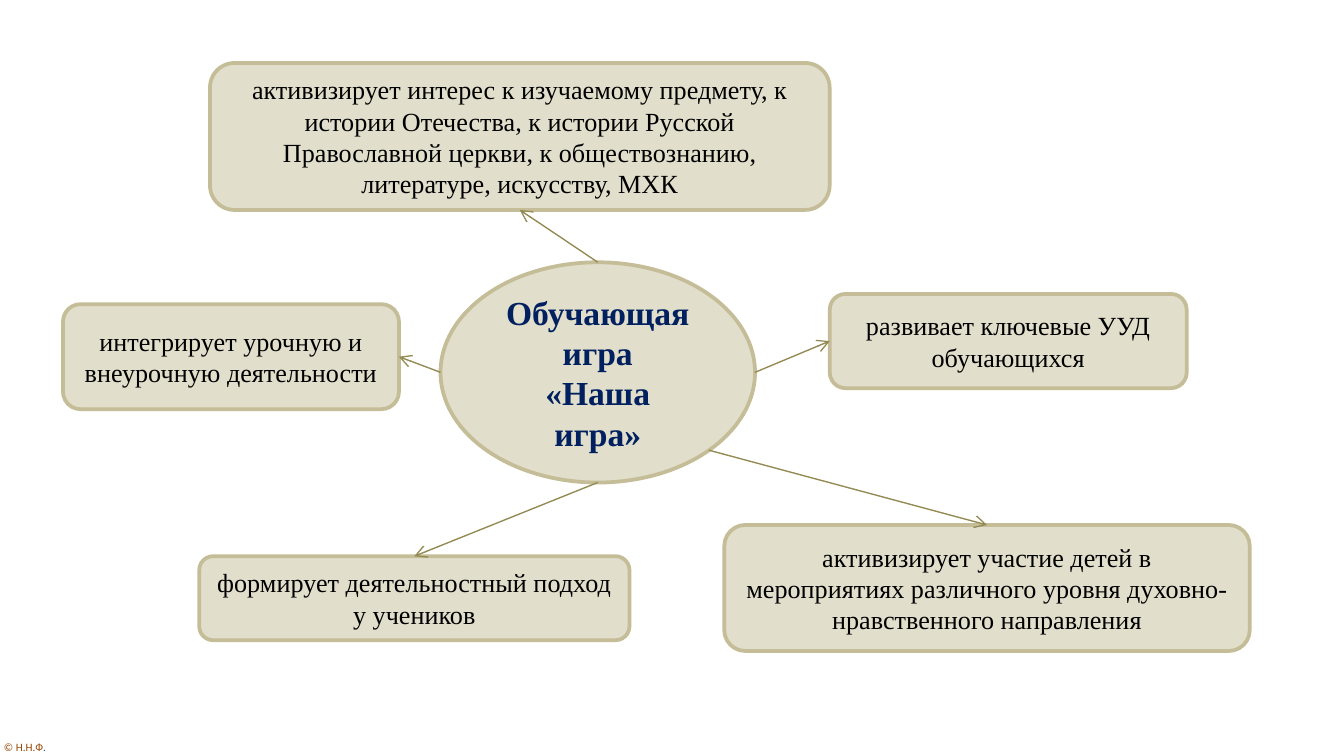
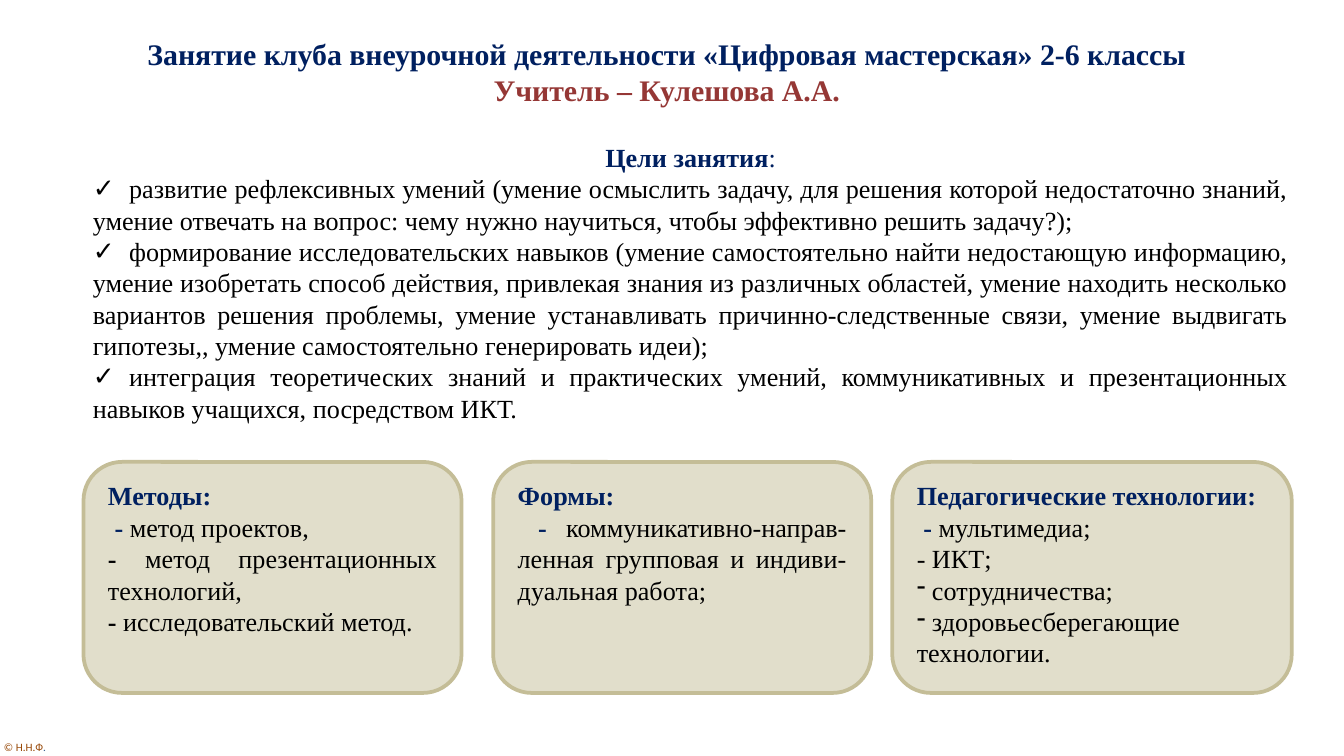
import math

import pptx
import pptx.dml.color
import pptx.enum.shapes
import pptx.enum.text
import pptx.oxml
import pptx.oxml.ns
import pptx.util
import lxml.etree

Pt = pptx.util.Pt
qn = pptx.oxml.ns.qn
RGB = pptx.dml.color.RGBColor.from_string
SHAPE = pptx.enum.shapes.MSO_SHAPE
ALIGN = pptx.enum.text.PP_ALIGN
ANCHOR = pptx.enum.text.MSO_ANCHOR

COLORS = {
    "navy": "002060", "red": "953735", "black": "000000",
    "sand": "DDD9C3", "border": "C4BD97", "arrow": "948A54",
    "brown": "984807", "blue": "376092",
}
SERIF = "Times New Roman"
BODY = {"name": SERIF, "size": Pt(14), "bold": False, "color": "black"}
HEAD = {**BODY, "bold": True, "color": "navy"}
DASH = {**BODY, "bold": True}
CENTER, JUSTIFY, LEFT = ALIGN.CENTER, ALIGN.JUSTIFY, ALIGN.LEFT


def write(tf, paras):
    """Fill a text frame; each paragraph is (alignment, layout, runs)."""
    for i, (align, layout, runs) in enumerate(paras):
        p = tf.paragraphs[0] if i == 0 else tf.add_paragraph()
        p.alignment, p.space_before = align, Pt(0)
        pPr = p._p.get_or_add_pPr()
        pPr.set("marL", "0")
        pPr.set("indent", str(Pt(layout.get("indent", 0))))
        if "bullet" in layout:
            lxml.etree.SubElement(pPr, qn("a:buChar")).set("char", layout["bullet"])
        else:
            lxml.etree.SubElement(pPr, qn("a:buNone"))
        if "tab" in layout:
            tabs = lxml.etree.SubElement(pPr, qn("a:tabLst"))
            tab = lxml.etree.SubElement(tabs, qn("a:tab"))
            tab.set("pos", str(Pt(layout["tab"])))
            tab.set("algn", "l")
        for text, fmt in runs:
            r = p.add_run()
            r.text = text
            for key, value in fmt.items():
                if key == "color":
                    r.font.color.rgb = RGB(COLORS[value])
                else:
                    setattr(r.font, key, value)


def add_box(s, kind, at, anchor, paras):
    """Add a sand-coloured shape with a border and text."""
    sp = s.shapes.add_shape(kind, *map(Pt, at))
    sp.shadow.inherit = False
    sp.fill.solid()
    sp.fill.fore_color.rgb = RGB(COLORS["sand"])
    clr = sp._element.spPr.find(qn("a:solidFill"))[0]
    lxml.etree.SubElement(clr, qn("a:alpha")).set("val", "86000")
    sp.line.color.rgb = RGB(COLORS["border"])
    sp.line.width = Pt(2)
    sp.text_frame.word_wrap = True
    sp.text_frame.vertical_anchor = anchor
    write(sp.text_frame, paras)


prs = pptx.Presentation()
prs.slide_width, prs.slide_height = Pt(720), Pt(405)

# Slide 1: mind map
s = prs.slides.add_slide(prs.slide_layouts[6])

# Copyright mark, moved to the master so that every slide shows it
sp = s.shapes.add_textbox(Pt(-5), Pt(393), Pt(37.5), Pt(14.4))
sp.text_frame.word_wrap = False
mark = {"name": "Calibri", "size": Pt(6), "color": "brown"}
write(sp.text_frame, [(LEFT, {}, [("© Н.Н.Ф", mark), (".", {**mark, "color": "blue"})])])
prs.slide_master.shapes._spTree.append(sp._element)

# Central ellipse
hub = (236, 140.5, 168.5, 118)
hub_font = {**HEAD, "size": Pt(18)}
add_box(s, SHAPE.OVAL, hub, ANCHOR.MIDDLE, [
    (CENTER, {}, [("Обучающая игра", hub_font)]),
    (CENTER, {}, [("«Наша игра»", hub_font)]),
])

# Boxes: position, angle of the arrow on the ellipse, arrow end on the box
branches = [
    ((112.5, 33.75, 332, 78.75), 270, (0.5, 1),
     "активизирует интерес к изучаемому предмету, к истории Отечества, к истории "
     "Русской Православной церкви, к обществознанию, литературе, искусству, МХК"),
    ((388, 281.25, 281.5, 67.5), 45, (0.5, 0),
     "активизирует участие детей в мероприятиях различного уровня "
     "духовно-нравственного направления"),
    ((33.75, 163, 180, 56.25), 180, (1, 0.5),
     "интегрирует урочную и внеурочную деятельности"),
    ((444.5, 157.5, 191.25, 50.5), 0, (0, 0.5),
     "развивает ключевые УУД обучающихся"),
    ((106.75, 298, 230.5, 45), 90, (0.5, 0),
     "формирует деятельностный подход у учеников"),
]
for at, angle, end, text in branches:
    add_box(s, SHAPE.ROUNDED_RECTANGLE, at, ANCHOR.MIDDLE, [(CENTER, {}, [(text, BODY)])])

# Arrows from the ellipse to the boxes
for (x, y, w, h), angle, (fx, fy), text in branches:
    a = math.radians(angle)
    x1 = hub[0] + hub[2] / 2 * (1 + math.cos(a))
    y1 = hub[1] + hub[3] / 2 * (1 + math.sin(a))
    c = s.shapes.add_connector(pptx.enum.shapes.MSO_CONNECTOR.STRAIGHT,
                               Pt(x1), Pt(y1), Pt(x + fx * w), Pt(y + fy * h))
    c.line.color.rgb = RGB(COLORS["arrow"])
    c.line.width = Pt(0.75)
    lxml.etree.SubElement(c.line._get_or_add_ln(), qn("a:tailEnd")).set("type", "arrow")
    lxml.etree.SubElement(c._element.spPr, qn("a:effectLst"))

# Slide 2: club lesson
s = prs.slides.add_slide(prs.slide_layouts[1])
title, body = s.shapes.title, s.placeholders[1]
for sp, at, anchor in [(title, (36.75, 15.5, 641, 46), ANCHOR.MIDDLE),
                       (body, (42.5, 72, 655, 165), ANCHOR.TOP)]:
    sp.left, sp.top, sp.width, sp.height = map(Pt, at)
    tf = sp.text_frame
    tf.word_wrap, tf.vertical_anchor = True, anchor
    tf.auto_size = pptx.enum.text.MSO_AUTO_SIZE.NONE

# Title
title_font = {**HEAD, "size": Pt(16)}
write(title.text_frame, [
    (CENTER, {}, [("Занятие клуба внеурочной деятельности «Цифровая мастерская» 2-6 классы",
                   title_font)]),
    (CENTER, {}, [("Учитель – Кулешова А.А.", {**title_font, "color": "red"})]),
])

# Goals
goals = [
    "развитие рефлексивных умений (умение осмыслить задачу, для решения которой "
    "недостаточно знаний, умение отвечать на вопрос: чему нужно научиться, чтобы "
    "эффективно решить задачу?);",
    "формирование исследовательских навыков (умение самостоятельно найти недостающую "
    "информацию, умение изобретать способ действия, привлекая знания из различных "
    "областей, умение находить несколько вариантов решения проблемы, умение "
    "устанавливать причинно-следственные связи, умение выдвигать гипотезы,, умение "
    "самостоятельно генерировать идеи);",
    "интеграция теоретических знаний и практических умений, коммуникативных и "
    "презентационных навыков учащихся, посредством ИКТ.",
]
check = {"bullet": "✓", "tab": 19.5}
write(body.text_frame,
      [(CENTER, {}, [("Цели занятия", HEAD), (":", {**HEAD, "bold": False})])]
      + [(JUSTIFY, check, [("\t" + goal, BODY)]) for goal in goals])

# Cards: left, width, alignment, heading, paragraphs
cards = [
    (44.75, 202.5, JUSTIFY, "Методы:", [
        ({"indent": 3.5}, [("- ", HEAD), ("метод проектов,", BODY)]),
        ({}, [("- ", DASH), ("метод презентационных технологий,", BODY)]),
        ({}, [("-", DASH), (" исследовательский метод.", BODY)]),
    ]),
    (264.25, 202.5, JUSTIFY, "Формы:", [
        ({"indent": 11}, [("- ", HEAD), ("коммуникативно-направ-ленная групповая "
                                         "и индиви-дуальная работа;", BODY)]),
    ]),
    (478, 214, LEFT, "Педагогические технологии:", [
        ({"indent": 3.5}, [("- ", HEAD), ("мультимедиа;", BODY)]),
        ({}, [("- ИКТ;", BODY)]),
        ({"bullet": "-"}, [(" сотрудничества;", BODY)]),
        ({"bullet": "-"}, [(" здоровьесберегающие технологии.", BODY)]),
    ]),
]
for left, width, align, heading, items in cards:
    add_box(s, SHAPE.ROUNDED_RECTANGLE, (left, 247.5, width, 123.75), ANCHOR.TOP,
            [(align, {}, [(heading, HEAD)])]
            + [(align, layout, runs) for layout, runs in items])

prs.save("out.pptx")
